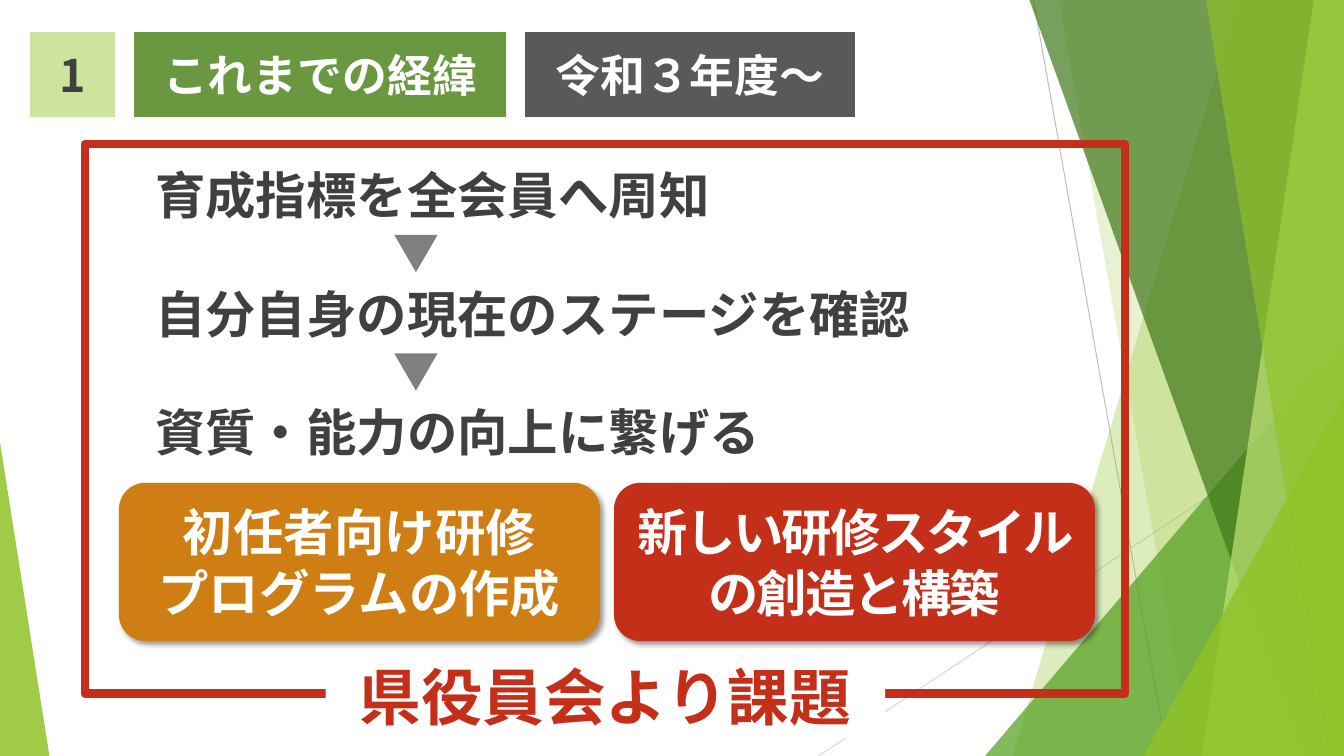
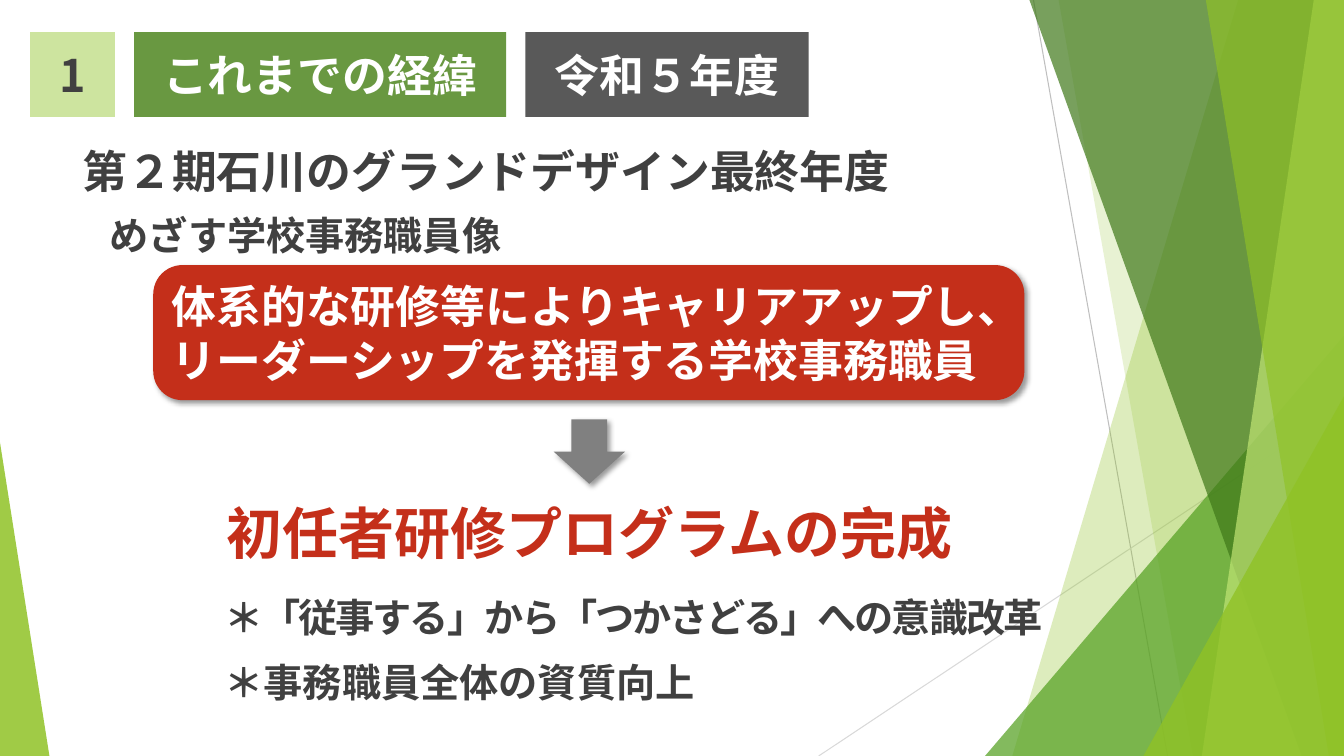
from dataclasses import dataclass

from lxml.etree import SubElement
from pptx import Presentation
from pptx.dml.color import RGBColor
from pptx.enum.shapes import MSO_CONNECTOR, MSO_SHAPE
from pptx.enum.text import MSO_ANCHOR, PP_ALIGN
from pptx.oxml.ns import qn
from pptx.shapes.autoshape import Shape
from pptx.slide import Slide
from pptx.text.text import TextFrame
from pptx.util import Inches, Pt

FONT = "Noto Sans CJK JP"
WIDTH, HEIGHT = 13.33, 7.5
COLORS = {
    "white": "FFFFFF",
    "text": "404040",
    "red": "C42F1A",
    "orange": "CF7E13",
    "gray": "808080",
    "period": "595959",
    "heading": "699841",
    "number": "CDE49F",
    "lime": "90C226",
    "green": "54A021",
    "forest": "3F7819",
    "pale": "C0E474",
    "line_dark": "BFBFBF",
    "line_light": "D9D9D9",
}


@dataclass(frozen=True)
class Box:
    left: float
    top: float
    width: float
    height: float

    def lengths(self) -> tuple[Inches, ...]:
        return tuple(Inches(v) for v in (self.left, self.top, self.width, self.height))


@dataclass(frozen=True)
class TextStyle:
    size: int
    color: str = "text"
    align: PP_ALIGN = PP_ALIGN.LEFT
    spacing: float = 0


@dataclass(frozen=True)
class Band:
    """Facet running from the top edge to the bottom edge, up to the right side."""
    top_x: float
    bottom_x: float
    color: str
    opacity: int


@dataclass(frozen=True)
class Corner:
    """Triangular facet standing on the bottom edge."""
    box: Box
    apex: float
    color: str
    opacity: int


@dataclass(frozen=True)
class Ray:
    start: tuple[float, float]
    end: tuple[float, float]
    color: str


RAYS = [
    Ray((10.25, 0), (11.58, HEIGHT), "line_dark"),
    Ray((WIDTH, 4.03), (8.12, HEIGHT), "line_light"),
]
FACETS = [
    Band(12.28, 10.04, "lime", 30),
    Band(10.5, 11.83, "lime", 20),
    Corner(Box(9.77, 3.33, 3.56, 4.17), 1, "green", 72),
    Band(10.21, 12.91, "forest", 70),
    Band(13.03, 11.92, "pale", 70),
    Band(11.96, 13.18, "lime", 65),
    Corner(Box(11.34, 3.93, 1.99, 3.57), 1, "lime", 80),
    Corner(Box(0, 4.39, 0.49, 3.11), 0, "lime", 85),
]


def rgb(name: str) -> RGBColor:
    return RGBColor.from_string(COLORS[name])


def paint(shape: Shape, color: str, opacity: int = 100) -> None:
    shape.shadow.inherit = False
    shape.line.fill.background()
    shape.fill.solid()
    shape.fill.fore_color.rgb = rgb(color)
    if opacity < 100:
        color_element = shape.element.spPr.find(qn("a:solidFill"))[0]
        SubElement(color_element, qn("a:alpha"), val=str(opacity * 1000))


def add_shadow(shape: Shape) -> None:
    effects = shape.element.spPr.find(qn("a:effectLst"))
    shadow = SubElement(effects, qn("a:outerShdw"), blurRad=str(Pt(4)),
                        dist=str(Pt(3)), dir="2700000", algn="tl", rotWithShape="0")
    shadow_color = SubElement(shadow, qn("a:srgbClr"), val="000000")
    SubElement(shadow_color, qn("a:alpha"), val="40000")


def write(text_frame: TextFrame, text: str, style: TextStyle) -> None:
    text_frame.word_wrap = True
    text_frame.text = text
    for paragraph in text_frame.paragraphs:
        paragraph.alignment = style.align
        for run in paragraph.runs:
            run.font.name = FONT
            run.font.size = Pt(style.size)
            run.font.bold = True
            run.font.color.rgb = rgb(style.color)
            properties = run.font._element
            SubElement(properties, qn("a:ea"), typeface=FONT)
            if style.spacing:
                properties.set("spc", str(int(style.spacing * 100)))


def add_text(slide: Slide, box: Box, text: str, style: TextStyle) -> None:
    write(slide.shapes.add_textbox(*box.lengths()).text_frame, text, style)


def add_block(slide: Slide, box: Box, color: str, kind: MSO_SHAPE = MSO_SHAPE.RECTANGLE,
              shadow: bool = False) -> Shape:
    shape = slide.shapes.add_shape(kind, *box.lengths())
    paint(shape, color)
    if shadow:
        add_shadow(shape)
    return shape


def add_label(slide: Slide, box: Box, color: str, text: str, style: TextStyle,
              rounded: bool = False) -> Shape:
    kind = MSO_SHAPE.ROUNDED_RECTANGLE if rounded else MSO_SHAPE.RECTANGLE
    shape = add_block(slide, box, color, kind, shadow=rounded)
    shape.text_frame.vertical_anchor = MSO_ANCHOR.MIDDLE
    write(shape.text_frame, text, style)
    return shape


def add_background(slide: Slide) -> None:
    for ray in RAYS:
        points = [Inches(value) for value in ray.start + ray.end]
        connector = slide.shapes.add_connector(MSO_CONNECTOR.STRAIGHT, *points)
        connector.line.color.rgb = rgb(ray.color)
        connector.line.width = Pt(0.75)
        SubElement(connector.element.spPr, qn("a:effectLst"))
    for facet in FACETS:
        if isinstance(facet, Band):
            builder = slide.shapes.build_freeform(Inches(facet.top_x), 0)
            outline = [(WIDTH, 0), (WIDTH, HEIGHT), (facet.bottom_x, HEIGHT)]
            builder.add_line_segments([(Inches(x), Inches(y)) for x, y in outline])
            shape = builder.convert_to_shape()
        else:
            shape = slide.shapes.add_shape(MSO_SHAPE.ISOSCELES_TRIANGLE, *facet.box.lengths())
            shape.adjustments[0] = facet.apex
        paint(shape, facet.color, facet.opacity)


def add_header(slide: Slide, period: str, period_width: float) -> None:
    labels = [
        (0.3, 0.84, "number", "1", "text"),
        (1.33, 3.69, "heading", "これまでの経緯", "white"),
        (5.21, period_width, "period", period, "white"),
    ]
    for left, width, fill, text, color in labels:
        add_label(slide, Box(left, 0.32, width, 0.84), fill, text,
                  TextStyle(32, color, PP_ALIGN.CENTER))


def new_slide(presentation: Presentation, period: str, period_width: float) -> Slide:
    slide = presentation.slides.add_slide(presentation.slide_layouts[6])
    add_background(slide)
    add_header(slide, period, period_width)
    return slide


def build_issues_slide(presentation: Presentation) -> None:
    slide = new_slide(presentation, "令和３年度～", 3.27)

    # Steps with a pointer between each pair
    steps = ["育成指標を全会員へ周知", "自分自身の現在のステージを確認", "資質・能力の向上に繋げる"]
    for index, step in enumerate(steps):
        top = 1.58 + index * 1.175
        add_text(slide, Box(1.44, top, 8.57, 0.71), step, TextStyle(36))
        if index < len(steps) - 1:
            pointer = add_block(slide, Box(3.91, top + 0.75, 0.43, 0.37), "gray",
                                MSO_SHAPE.ISOSCELES_TRIANGLE)
            pointer.rotation = 180

    # Frame with its caption
    frame = slide.shapes.add_shape(MSO_SHAPE.RECTANGLE, *Box(0.84, 1.43, 10.32, 5.45).lengths())
    frame.shadow.inherit = False
    frame.fill.background()
    frame.line.color.rgb = rgb("red")
    frame.line.width = Pt(6)
    SubElement(frame.element.spPr.find(qn("a:ln")), qn("a:round"))
    add_label(slide, Box(3.23, 6.48, 5.55, 0.84), "white", "県役員会より課題",
              TextStyle(44, "red", PP_ALIGN.CENTER))

    # Two issues
    issues = [
        (1.18, "orange", "初任者向け研修\nプログラムの作成", 0),
        (6.09, "red", "新しい研修スタイルの創造と構築", -1.5),
    ]
    for left, color, text, spacing in issues:
        add_label(slide, Box(left, 4.79, 4.77, 1.57), color, text,
                  TextStyle(36, "white", PP_ALIGN.CENTER, spacing), rounded=True)


def build_completion_slide(presentation: Presentation) -> None:
    slide = new_slide(presentation, "令和５年度", 2.81)

    # Goal
    add_text(slide, Box(0.72, 1.38, 8.64, 0.64), "第２期石川のグランドデザイン最終年度",
             TextStyle(32))
    add_text(slide, Box(0.99, 2.05, 6.68, 0.57), "めざす学校事務職員像", TextStyle(28))
    goal = add_label(slide, Box(1.52, 2.63, 8.64, 1.34), "red",
                     "体系的な研修等によりキャリアアップし、リーダーシップを発揮する学校事務職員",
                     TextStyle(32, "white"), rounded=True)
    goal.adjustments[0] = 0.216

    # Result
    add_block(slide, Box(5.49, 4.16, 0.71, 0.64), "gray", MSO_SHAPE.DOWN_ARROW, shadow=True)
    add_text(slide, Box(1.81, 4.9, 8.07, 0.77), "初任者研修プログラムの完成",
             TextStyle(40, "red", PP_ALIGN.CENTER))
    add_text(slide, Box(2.13, 5.84, 8.56, 0.57), "＊「従事する」から「つかさどる」への意識改革",
             TextStyle(28, spacing=-1.5))
    add_text(slide, Box(2.13, 6.48, 6.52, 0.57), "＊事務職員全体の資質向上", TextStyle(28))


def main() -> None:
    presentation = Presentation()
    presentation.slide_width = Inches(WIDTH)
    presentation.slide_height = Inches(HEIGHT)
    build_issues_slide(presentation)
    build_completion_slide(presentation)
    presentation.save("out.pptx")


if __name__ == "__main__":
    main()
